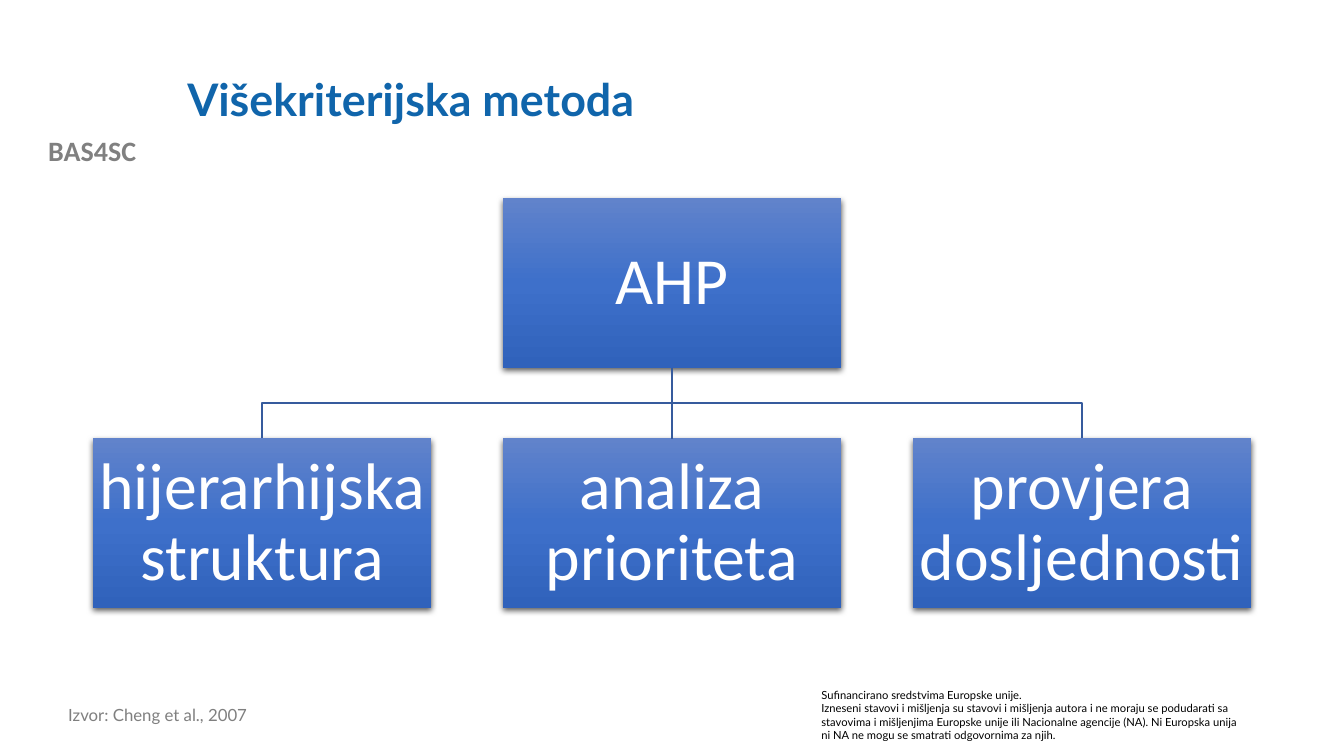
from copy import deepcopy
from dataclasses import dataclass

from lxml.etree import SubElement
from pptx import Presentation
from pptx.dml.color import RGBColor
from pptx.enum.shapes import MSO_CONNECTOR, MSO_SHAPE
from pptx.enum.text import MSO_ANCHOR, PP_ALIGN
from pptx.oxml.ns import qn
from pptx.shapes.autoshape import Shape
from pptx.slide import Slide
from pptx.text.text import TextFrame
from pptx.util import Cm, Pt

BOX_WIDTH, BOX_HEIGHT = 8.53, 4.27
COLUMN_STEP = 10.33
FIRST_LEFT = 2.34
TOP_ROW, BOTTOM_ROW = 5.0, 11.05
GRADIENT = ((0, "6183CB"), (0.5, "3E70CA"), (1, "3062BB"))
LINE_COLOR = "365B9D"


@dataclass(frozen=True)
class TextStyle:
    size: float
    color: str
    font: str = "Lato"
    bold: bool = False
    align: PP_ALIGN = PP_ALIGN.LEFT
    anchor: MSO_ANCHOR = MSO_ANCHOR.TOP
    line_spacing: float = 1.0


@dataclass(frozen=True)
class Label:
    left: float
    top: float
    width: float
    height: float
    paragraphs: tuple[str, ...]
    style: TextStyle


@dataclass(frozen=True)
class Node:
    text: str
    column: int
    top: float


LABELS = (
    Label(0, 3.25, 4.65, 1.12, ("BAS4SC",),
          TextStyle(20, "808080", "Calibri", True, PP_ALIGN.CENTER)),
    Label(20.45, 17.22, 11.1, 1.63, (
        "Sufinancirano sredstvima Europske unije.",
        "Izneseni stavovi i mišljenja su stavovi i mišljenja autora i ne moraju "
        "se podudarati sa stavovima i mišljenjima Europske unije ili Nacionalne "
        "agencije (NA). Ni Europska unija ni NA ne mogu se smatrati odgovornima "
        "za njih."), TextStyle(8, "000000")),
    Label(4.47, 1.02, 27.08, 3.1, ("Višekriterijska metoda",),
          TextStyle(32, "1065AB", bold=True, anchor=MSO_ANCHOR.MIDDLE, line_spacing=0.9)),
    Label(1.47, 17.68, 14.99, 0.89, ("Izvor: Cheng et al., 2007",),
          TextStyle(12, "7F7F7F", line_spacing=0.9)),
)
NODE_STYLE = TextStyle(47, "FFFFFF", "Calibri", False, PP_ALIGN.CENTER,
                       MSO_ANCHOR.MIDDLE, 0.9)
ROOT = Node("AHP", 1, TOP_ROW)
CHILDREN = tuple(
    Node(text, column, BOTTOM_ROW)
    for column, text in enumerate(
        ("hijerarhijska struktura", "analiza prioriteta", "provjera dosljednosti"))
)


def rgb(value: str) -> RGBColor:
    return RGBColor.from_string(value)


def write_text(frame: TextFrame, paragraphs: tuple[str, ...], style: TextStyle) -> None:
    frame.word_wrap = True
    frame.vertical_anchor = style.anchor
    for index, text in enumerate(paragraphs):
        paragraph = frame.add_paragraph() if index else frame.paragraphs[0]
        paragraph.alignment = style.align
        paragraph.line_spacing = style.line_spacing
        run = paragraph.add_run()
        run.text = text
        run.font.name = style.font
        run.font.size = Pt(style.size)
        run.font.bold = style.bold
        run.font.color.rgb = rgb(style.color)


def add_label(slide: Slide, label: Label) -> None:
    box = slide.shapes.add_textbox(
        Cm(label.left), Cm(label.top), Cm(label.width), Cm(label.height))
    write_text(box.text_frame, label.paragraphs, label.style)


def fill_gradient(shape: Shape) -> None:
    shape.fill.gradient()
    shape.fill.gradient_angle = 270
    stop_list = shape.element.spPr.find(".//" + qn("a:gsLst"))
    stop_list.insert(1, deepcopy(stop_list[0]))
    for stop, (position, color) in zip(shape.fill.gradient_stops, GRADIENT):
        stop.position = position
        stop.color.rgb = rgb(color)


def add_shadow(shape: Shape) -> None:
    shape.shadow.inherit = False
    effects = shape.element.spPr.find(qn("a:effectLst"))
    shadow = SubElement(effects, qn("a:outerShdw"), blurRad=str(Pt(4.5)),
                        dist=str(Pt(1.5)), dir="5400000", algn="ctr", rotWithShape="0")
    color = SubElement(shadow, qn("a:srgbClr"), val="000000")
    SubElement(color, qn("a:alpha"), val="63000")


def add_node(slide: Slide, node: Node) -> Shape:
    shape = slide.shapes.add_shape(
        MSO_SHAPE.RECTANGLE, Cm(FIRST_LEFT + node.column * COLUMN_STEP),
        Cm(node.top), Cm(BOX_WIDTH), Cm(BOX_HEIGHT))
    fill_gradient(shape)
    shape.line.fill.background()
    add_shadow(shape)
    frame = shape.text_frame
    frame.margin_left = frame.margin_right = Cm(0.08)
    frame.margin_top = frame.margin_bottom = Cm(0.08)
    write_text(frame, (node.text,), NODE_STYLE)
    return shape


def add_branch(slide: Slide, parent: Shape, child: Shape) -> None:
    """Join parent to child, straight when aligned and bent otherwise."""
    start_x = parent.left + parent.width // 2
    start_y = parent.top + parent.height
    end_x, end_y = child.left + child.width // 2, child.top
    if start_x == end_x:
        branch = slide.shapes.add_connector(
            MSO_CONNECTOR.STRAIGHT, start_x, start_y, end_x, end_y)
        branch.begin_connect(parent, 2)
        branch.end_connect(child, 0)
        SubElement(branch.element.spPr, qn("a:effectLst"))
    else:
        middle_y = (start_y + end_y) // 2
        builder = slide.shapes.build_freeform(start_x, start_y)
        builder.add_line_segments(
            [(start_x, middle_y), (end_x, middle_y), (end_x, end_y)], close=False)
        branch = builder.convert_to_shape()
        branch.fill.background()
        branch.shadow.inherit = False
    branch.line.color.rgb = rgb(LINE_COLOR)
    branch.line.width = Pt(1)


def main() -> None:
    presentation = Presentation()
    presentation.slide_width, presentation.slide_height = Cm(33.87), Cm(19.05)
    slide = presentation.slides.add_slide(presentation.slide_layouts[6])
    for label in LABELS:
        add_label(slide, label)
    root = add_node(slide, ROOT)
    for node in CHILDREN:
        add_branch(slide, root, add_node(slide, node))
    presentation.save("out.pptx")


if __name__ == "__main__":
    main()
